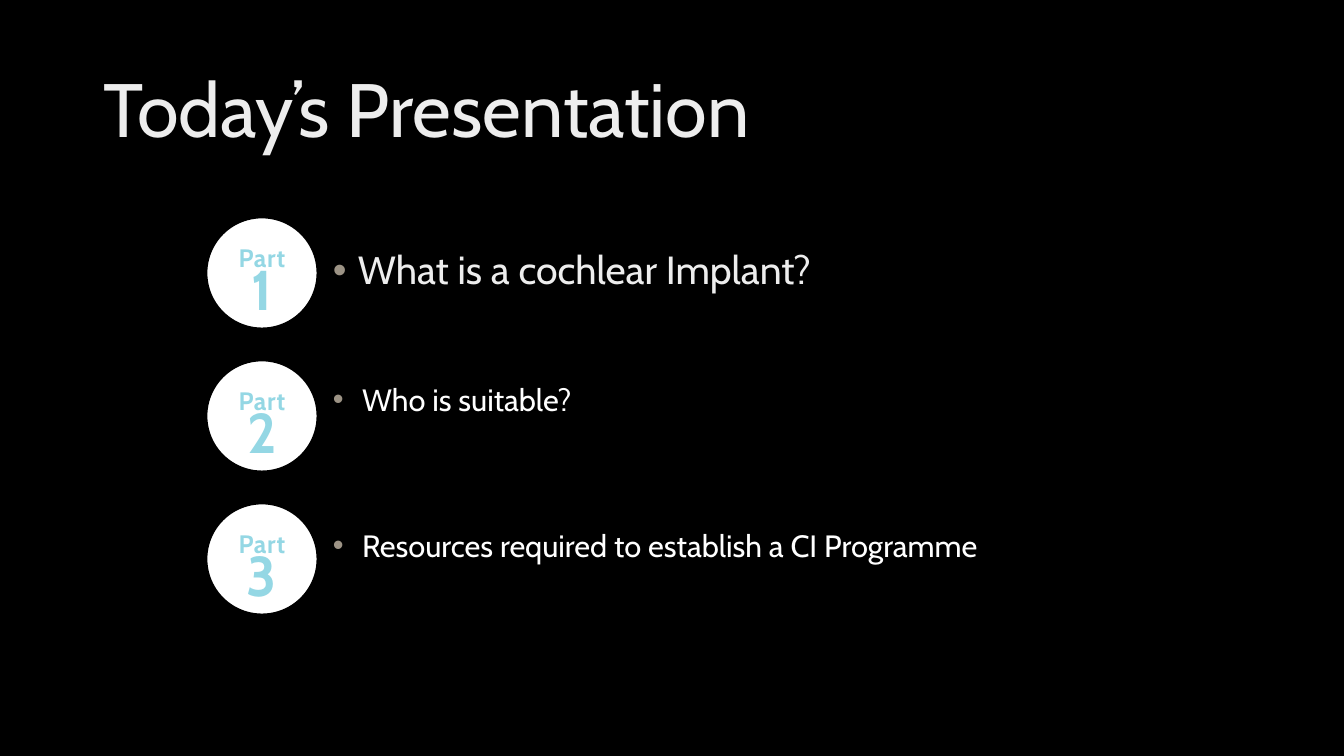
from lxml import etree
from pptx import Presentation
from pptx.dml.color import RGBColor as Rgb
from pptx.enum.shapes import MSO_SHAPE as Shape
from pptx.enum.text import MSO_ANCHOR as Anchor, PP_ALIGN as Align
from pptx.oxml.ns import qn
from pptx.util import Pt

PX = 914400 / 100.8
THEME = {
    "font": "Cabin",
    "background": Rgb(0x00, 0x00, 0x00),
    "heading": Rgb(0xED, 0xED, 0xED),
    "white": Rgb(0xFF, 0xFF, 0xFF),
    "badge_text": Rgb(0x94, 0xD7, 0xE4),
    "bullet": "9C9385",
    "title_size": 54,
    "lead_size": 28,
    "topic_size": 22,
    "part_size": 18,
    "number_size": 40,
}


def px(*lengths):
    return [round(length * PX) for length in lengths]


def add_run(paragraph, text, size, color, bold=False):
    run = paragraph.add_run()
    run.text = text
    run.font.name = THEME["font"]
    run.font.size = Pt(size)
    run.font.bold = bold
    run.font.color.rgb = color
    return run


deck = Presentation()
deck.slide_width, deck.slide_height = px(1344, 756)
slide = deck.slides.add_slide(deck.slide_layouts[5])
slide.background.fill.solid()
slide.background.fill.fore_color.rgb = THEME["background"]

title = slide.shapes.title
title.left, title.top, title.width, title.height = px(93, 40, 1159, 146)
title.text_frame.vertical_anchor = Anchor.MIDDLE
heading = title.text_frame.paragraphs[0]
heading.alignment = Align.LEFT
heading.line_spacing = 0.9
add_run(heading, "Today’s Presentation", THEME["title_size"], THEME["heading"])

# Topic, centre of its line, bullet indent, size, colour, line spacing
parts = [
    ("What is a cochlear Implant?", 272, 25, THEME["lead_size"], THEME["heading"], 0.9),
    ("Who is suitable?", 399, 29, THEME["topic_size"], THEME["white"], 1.0),
    ("Resources required to establish a CI Programme", 545, 29,
     THEME["topic_size"], THEME["white"], 1.0),
]
BADGE_TOP, BADGE_STEP, BADGE_SIZE = 217, 143, 112
TOPIC_HEIGHT = 70

for index, (topic, center, indent, size, color, spacing) in enumerate(parts):
    badge = slide.shapes.add_shape(
        Shape.OVAL, *px(206, BADGE_TOP + index * BADGE_STEP, BADGE_SIZE, BADGE_SIZE))
    badge.shadow.inherit = False
    badge.fill.solid()
    badge.fill.fore_color.rgb = THEME["white"]
    badge.line.color.rgb = THEME["background"]
    badge.line.width = Pt(2)

    topic_box = slide.shapes.add_textbox(
        *px(333, center - TOPIC_HEIGHT // 2, 752, TOPIC_HEIGHT))
    for frame in (badge.text_frame, topic_box.text_frame):
        frame.word_wrap = True
        frame.vertical_anchor = Anchor.MIDDLE
        frame.margin_left = frame.margin_right = 0
        frame.margin_top = frame.margin_bottom = 0

    label = badge.text_frame.paragraphs[0]
    number = badge.text_frame.add_paragraph()
    for line, text, text_size in (
        (label, "Part", THEME["part_size"]),
        (number, str(index + 1), THEME["number_size"]),
    ):
        line.alignment = Align.CENTER
        line.line_spacing = Pt(35)
        run = add_run(line, text, text_size, THEME["badge_text"], bold=True)
        run.font._element.set("spc", "50")

    entry = topic_box.text_frame.paragraphs[0]
    entry.line_spacing = spacing
    properties = entry._p.get_or_add_pPr()
    properties.set("marL", str(px(indent)[0]))
    properties.set("indent", str(px(-indent)[0]))
    bullet_color = etree.SubElement(properties, qn("a:buClr"))
    etree.SubElement(bullet_color, qn("a:srgbClr"), val=THEME["bullet"])
    etree.SubElement(properties, qn("a:buFont"), typeface="Arial")
    etree.SubElement(properties, qn("a:buChar"), char="•")
    add_run(entry, topic, size, color)

deck.save("out.pptx")
